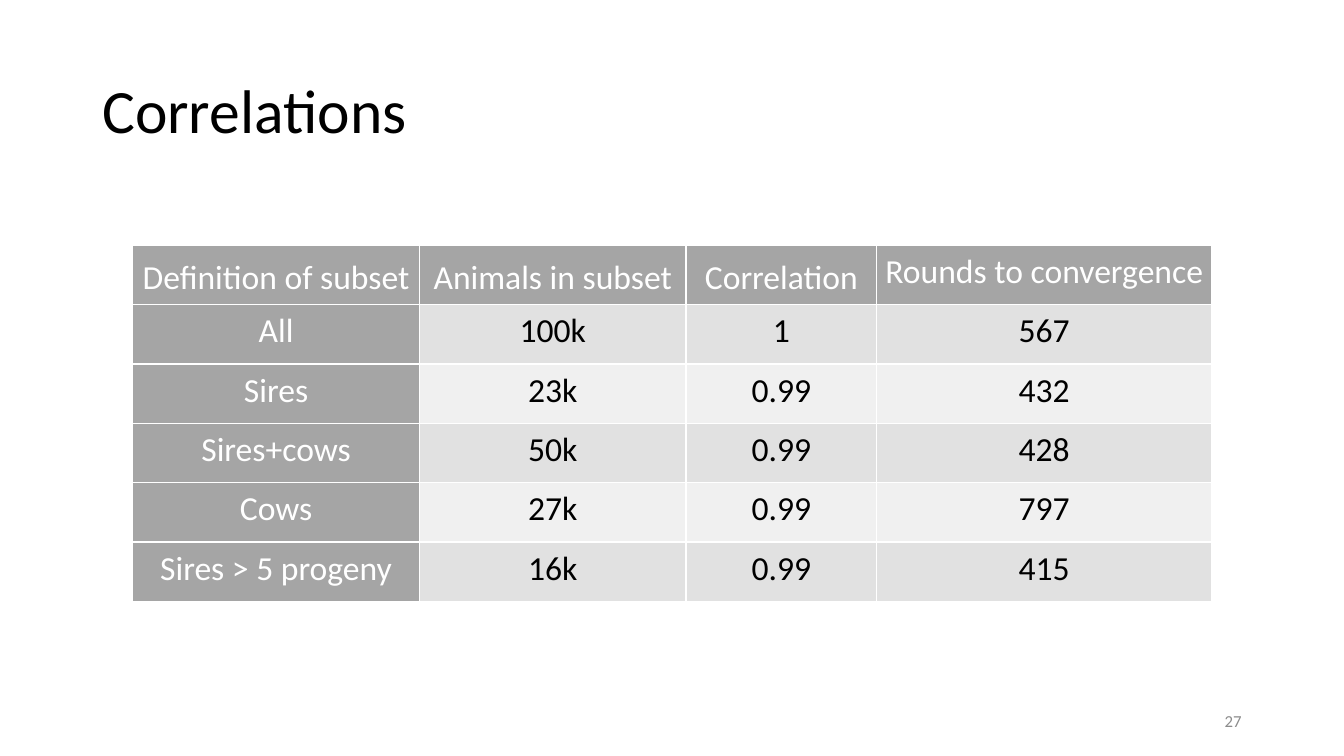
from dataclasses import dataclass

import lxml.etree
import pptx
import pptx.dml.color
import pptx.enum.text
import pptx.oxml.ns
import pptx.slide
import pptx.table
import pptx.text.text
import pptx.util

Pt = pptx.util.Pt
RGBColor = pptx.dml.color.RGBColor
Align = pptx.enum.text.PP_ALIGN
Anchor = pptx.enum.text.MSO_ANCHOR
qn = pptx.oxml.ns.qn

FONT = "Calibri"
BLACK = RGBColor(0x00, 0x00, 0x00)
WHITE = RGBColor(0xFF, 0xFF, 0xFF)
HEADING_GRAY = RGBColor(0xA5, 0xA5, 0xA5)
BAND_DARK = RGBColor(0xE1, 0xE1, 0xE1)
BAND_LIGHT = RGBColor(0xF0, 0xF0, 0xF0)
NUMBER_GRAY = RGBColor(0x8C, 0x8C, 0x8C)

TABLE_LEFT, TABLE_TOP = 94.7, 175.3
ROW_HEIGHT = 42.4
COLUMN_WIDTHS = (205, 190.4, 136.1, 239.5)
ROWS = (
    ("Definition of subset", "Animals in subset", "Correlation", "Rounds to convergence"),
    ("All", "100k", "1", "567"),
    ("Sires", "23k", "0.99", "432"),
    ("Sires+cows", "50k", "0.99", "428"),
    ("Cows", "27k", "0.99", "797"),
    ("Sires > 5 progeny", "16k", "0.99", "415"),
)


@dataclass(frozen=True)
class Label:
    text: str
    left: float
    top: float
    width: float
    height: float
    size: float
    color: RGBColor
    alignment: Align
    line_spacing: float = 1.0


LABELS = (
    Label("Correlations", 66, 28.8, 828, 104.4, 44, BLACK, Align.LEFT, 0.9),
    Label("27", 678, 500.5, 216, 28.8, 12, NUMBER_GRAY, Align.RIGHT),
)


def write_text(frame: pptx.text.text.TextFrame, text: str, size: float, color: RGBColor,
               alignment: Align, line_spacing: float) -> None:
    frame.text = text
    paragraph = frame.paragraphs[0]
    paragraph.alignment = alignment
    paragraph.line_spacing = line_spacing
    font = paragraph.runs[0].font
    font.name = FONT
    font.size = Pt(size)
    font.bold = False
    font.color.rgb = color


def add_label(slide: pptx.slide.Slide, label: Label) -> None:
    shape = slide.shapes.add_textbox(
        Pt(label.left), Pt(label.top), Pt(label.width), Pt(label.height))
    frame = shape.text_frame
    frame.word_wrap = True
    frame.vertical_anchor = Anchor.MIDDLE
    write_text(frame, label.text, label.size, label.color, label.alignment, label.line_spacing)


def add_borders(cell: pptx.table._Cell, color: RGBColor, width: float) -> None:
    properties = cell._tc.get_or_add_tcPr()
    for side in ("a:lnL", "a:lnR", "a:lnT", "a:lnB"):
        line = lxml.etree.SubElement(properties, qn(side), w=str(Pt(width)))
        fill = lxml.etree.SubElement(line, qn("a:solidFill"))
        lxml.etree.SubElement(fill, qn("a:srgbClr"), val=str(color))


def format_cell(cell: pptx.table._Cell, text: str, row: int, column: int) -> None:
    is_heading = row == 0 or column == 0
    band = BAND_DARK if row % 2 else BAND_LIGHT
    last_column = len(COLUMN_WIDTHS) - 1
    cell.margin_left = cell.margin_right = Pt(5)
    cell.margin_top = cell.margin_bottom = Pt(0)
    cell.vertical_anchor = Anchor.MIDDLE if row == 0 and column < last_column else Anchor.TOP
    add_borders(cell, WHITE, 1)
    cell.fill.solid()
    cell.fill.fore_color.rgb = HEADING_GRAY if is_heading else band
    write_text(cell.text_frame, text, 24, WHITE if is_heading else BLACK, Align.CENTER, 1.15)


def add_correlation_table(slide: pptx.slide.Slide) -> None:
    table = slide.shapes.add_table(
        len(ROWS), len(COLUMN_WIDTHS), Pt(TABLE_LEFT), Pt(TABLE_TOP),
        Pt(sum(COLUMN_WIDTHS)), Pt(ROW_HEIGHT * len(ROWS))).table
    table.first_row = False
    table.horz_banding = False
    for column, width in zip(table.columns, COLUMN_WIDTHS):
        column.width = Pt(width)
    for row, texts in enumerate(ROWS):
        table.rows[row].height = Pt(ROW_HEIGHT)
        for column, text in enumerate(texts):
            format_cell(table.cell(row, column), text, row, column)


def main() -> None:
    presentation = pptx.Presentation()
    presentation.slide_width = Pt(960)
    presentation.slide_height = Pt(540)
    slide = presentation.slides.add_slide(presentation.slide_layouts[6])
    add_correlation_table(slide)
    for label in LABELS:
        add_label(slide, label)
    presentation.save("out.pptx")


if __name__ == "__main__":
    main()
